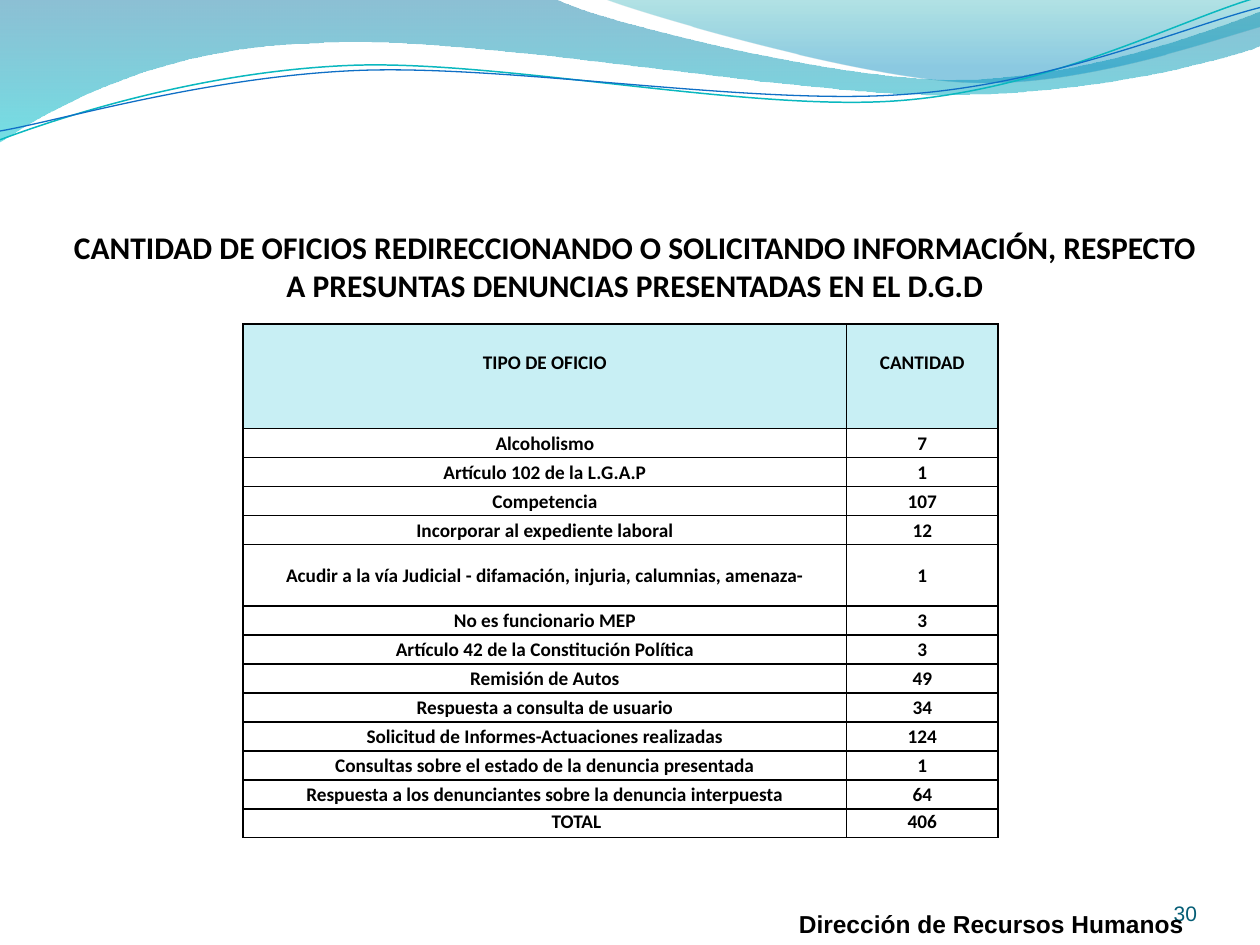
from dataclasses import dataclass

from lxml.etree import SubElement
from pptx import Presentation
from pptx.dml.color import RGBColor
from pptx.enum.text import MSO_ANCHOR as Anchor, PP_ALIGN as Align
from pptx.oxml.ns import qn
from pptx.util import Inches, Pt


@dataclass(frozen=True)
class Theme:
    ink: str = "000000"
    number: str = "045D75"
    header: str = "C8EFF4"
    teal: str = "0AB8BF"
    blue: str = "0F6FC6"
    heading_font: str = "Calibri"
    footer_font: str = "Arial"
    title_size: float = 18
    table_size: float = 11
    footer_size: float = 14
    number_size: float = 12
    border: float = 1


@dataclass(frozen=True)
class Stop:
    position: float
    color: str
    opacity: int


@dataclass(frozen=True)
class Wave:
    """A start point and segments: two numbers make a line, six a Bézier curve."""
    start: tuple
    segments: tuple
    stops: tuple = ()
    line: str = ""
    width: float = 0


@dataclass(frozen=True)
class Row:
    kind: str
    count: str
    height: float = 0.23
    anchor: Anchor = Anchor.MIDDLE
    indent: float = 0
    top_margin: float = 0
    fill: str = ""


THEME = Theme()

WAVES = (
    Wave((0, 0), (
        (4.4, -0.01),
        (4.76, 0.17, 6.64, 0.63, 7.58, 0.63),
        (8.53, 0.63, 9.58, 0.26, 10, 0.09),
        (10.01, 0.36),
        (9.83, 0.44, 8.7, 0.76, 7.46, 0.75),
        (6.22, 0.75, 3.82, 0.28, 2.57, 0.34),
        (1.29, 0.36, 0.46, 0.83, -0.01, 1.13),
        (0, 0),
    ), stops=(Stop(0, "0074A1", 45), Stop(1, "00C6CF", 55))),
    Wave((4.79, -0.01), (
        (5.09, 0.11, 6.82, 0.62, 7.69, 0.65),
        (8.56, 0.69, 9.61, 0.32, 10, 0.21),
        (10, 0),
        (4.79, -0.01),
    ), stops=(Stop(0, "00A1A9", 30), Stop(0.8, "008BBF", 45))),
    Wave((0, 1.11), (
        (0.48, 0.93, 1.58, 0.57, 2.77, 0.52),
        (3.95, 0.47, 5.93, 0.89, 7.13, 0.8),
        (8.33, 0.71, 9.38, 0.15, 9.98, -0.02),
    ), line=THEME.teal, width=0.85),
    Wave((0, 1.04), (
        (0.47, 0.96, 1.64, 0.61, 2.83, 0.56),
        (4.03, 0.51, 5.97, 0.84, 7.17, 0.75),
        (8.36, 0.67, 9.41, 0.21, 10, 0.06),
    ), line=THEME.blue, width=0.75),
)

ROWS = (
    Row("TIPO DE OFICIO", "CANTIDAD", 0.83, Anchor.TOP, top_margin=0.2, fill=THEME.header),
    Row("Alcoholismo", "7"),
    Row("Artículo 102 de la L.G.A.P", "1"),
    Row("Competencia", "107"),
    Row("Incorporar al expediente laboral", "12"),
    Row("Acudir a la vía Judicial - difamación, injuria, calumnias, amenaza-", "1", 0.49),
    Row("No es funcionario MEP", "3"),
    Row("Artículo 42 de la Constitución Política", "3"),
    Row("Remisión de Autos", "49"),
    Row("Respuesta a consulta de usuario", "34"),
    Row("Solicitud de Informes-Actuaciones realizadas", "124"),
    Row("Consultas sobre el estado de la denuncia presentada", "1"),
    Row("Respuesta a los denunciantes sobre la denuncia interpuesta", "64"),
    Row("TOTAL", "406", anchor=Anchor.TOP, indent=0.5),
)


def bend(shape, segments: tuple) -> None:
    """Turn the straight segments that have control points into Bézier curves."""
    edges = list(shape._element.iter(qn("a:lnTo")))
    for edge, segment in zip(edges, segments):
        if len(segment) == 2:
            continue
        edge.tag = qn("a:cubicBezTo")
        for position, (x, y) in enumerate((segment[:2], segment[2:4])):
            control = SubElement(edge, qn("a:pt"), x=str(Inches(x) - shape.left),
                                 y=str(Inches(y) - shape.top))
            edge.insert(position, control)


def draw_wave(slide, wave: Wave) -> None:
    builder = slide.shapes.build_freeform(*map(Inches, wave.start))
    ends = [tuple(map(Inches, segment[-2:])) for segment in wave.segments]
    builder.add_line_segments(ends, close=bool(wave.stops))
    ribbon = builder.convert_to_shape()
    bend(ribbon, wave.segments)
    ribbon.shadow.inherit = False
    if not wave.stops:
        ribbon.fill.background()
        ribbon.line.color.rgb = RGBColor.from_string(wave.line)
        ribbon.line.width = Pt(wave.width)
        return
    ribbon.line.fill.background()
    ribbon.fill.gradient()
    ribbon.fill.gradient_angle = 270
    for target, stop in zip(ribbon.fill.gradient_stops, wave.stops):
        target.position = stop.position
        target.color.rgb = RGBColor.from_string(stop.color)
    for color, stop in zip(ribbon._element.spPr.iter(qn("a:srgbClr")), wave.stops):
        SubElement(color, qn("a:alpha"), val=str(stop.opacity * 1000))


def write(frame, text: str, font: str, size: float, align: Align,
          color: str = THEME.ink, bold: bool = True):
    frame.text = text
    paragraph = frame.paragraphs[0]
    paragraph.alignment = align
    paragraph.font.name, paragraph.font.size, paragraph.font.bold = font, Pt(size), bold
    paragraph.font.color.rgb = RGBColor.from_string(color)
    return paragraph


def anchor_bottom(frame, top_margin: float = 0.05) -> None:
    frame.word_wrap = True
    frame.vertical_anchor = Anchor.BOTTOM
    frame.margin_left = frame.margin_right = frame.margin_bottom = 0
    frame.margin_top = Inches(top_margin)


def add_label(slide, box: tuple, text: str, size: float, align: Align,
              color: str, bold: bool, top_margin: float) -> None:
    frame = slide.shapes.add_textbox(*map(Inches, box)).text_frame
    anchor_bottom(frame, top_margin)
    write(frame, text, THEME.footer_font, size, align, color, bold)


def add_borders(cell) -> None:
    properties = cell._tc.get_or_add_tcPr()
    for position, side in enumerate(("a:lnL", "a:lnR", "a:lnT", "a:lnB")):
        edge = SubElement(properties, qn(side), w=str(Pt(THEME.border)))
        SubElement(SubElement(edge, qn("a:solidFill")), qn("a:srgbClr"), val=THEME.ink)
        properties.insert(position, edge)


def add_counts(slide) -> None:
    widths = (4.79, 1.2)
    table = slide.shapes.add_table(
        len(ROWS), len(widths), Inches(1.93), Inches(2.57), Inches(sum(widths)),
        Inches(sum(row.height for row in ROWS))).table
    table.first_row = table.horz_banding = False
    for column, width in zip(table.columns, widths):
        column.width = Inches(width)
    for line, row in zip(table.rows, ROWS):
        line.height = Inches(row.height)
        for cell, text, indent in zip(line.cells, (row.kind, row.count), (row.indent, 0)):
            cell.margin_left = cell.margin_right = Inches(0.07)
            cell.margin_top, cell.margin_bottom = Inches(row.top_margin), 0
            cell.vertical_anchor = row.anchor
            if row.fill:
                cell.fill.solid()
                cell.fill.fore_color.rgb = RGBColor.from_string(row.fill)
            else:
                cell.fill.background()
            add_borders(cell)
            paragraph = write(cell.text_frame, text, THEME.heading_font,
                              THEME.table_size, Align.CENTER)
            paragraph.line_spacing = 1.07
            if indent:
                paragraph._p.get_or_add_pPr().set("marL", str(Inches(indent)))


def main() -> None:
    deck = Presentation()
    deck.slide_width, deck.slide_height = Inches(10), Inches(7.5)
    slide = deck.slides.add_slide(deck.slide_layouts[5])
    for wave in WAVES:
        draw_wave(slide, wave)
    title = slide.shapes.title
    title.left, title.top, title.width, title.height = map(Inches, (0.5, 0.77, 9.08, 1.64))
    anchor_bottom(title.text_frame)
    write(title.text_frame, "CANTIDAD DE OFICIOS REDIRECCIONANDO O SOLICITANDO INFORMACIÓN, "
          "RESPECTO A PRESUNTAS DENUNCIAS PRESENTADAS EN EL D.G.D",
          THEME.heading_font, THEME.title_size, Align.CENTER)
    add_label(slide, (8.67, 6.95, 0.83, 0.4), "30", THEME.number_size, Align.RIGHT,
              THEME.number, False, 0)
    add_label(slide, (6.34, 7.05, 3.16, 0.4), "Dirección de Recursos Humanos",
              THEME.footer_size, Align.LEFT, THEME.ink, True, 0.05)
    add_counts(slide)
    deck.save("out.pptx")


if __name__ == "__main__":
    main()
